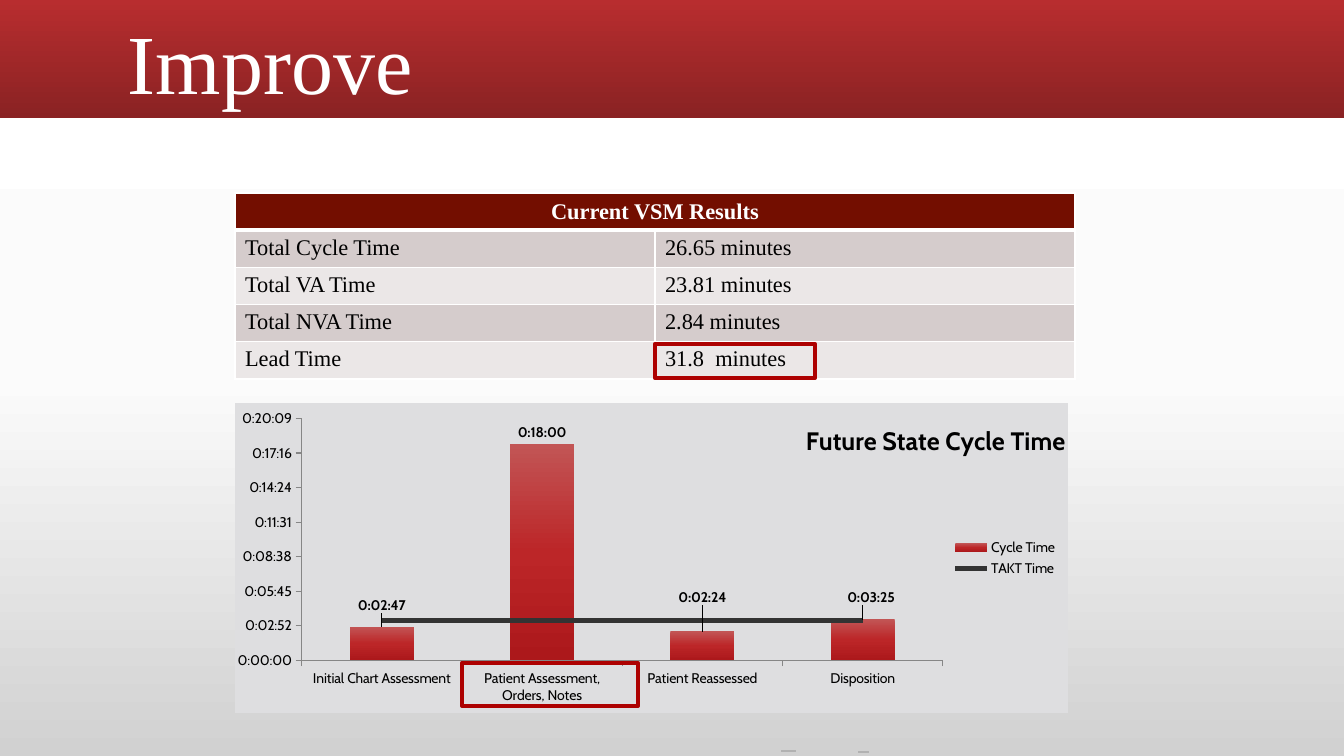
from copy import deepcopy
from lxml import etree
from pptx import Presentation
from pptx.chart.data import CategoryChartData as ChartData
from pptx.dml.color import RGBColor
from pptx.enum.chart import XL_CHART_TYPE as Kind, XL_LABEL_POSITION as Spot
from pptx.enum.chart import XL_LEGEND_POSITION as Side, XL_MARKER_STYLE as Mark
from pptx.enum.chart import XL_TICK_MARK as Tick
from pptx.enum.shapes import MSO_CONNECTOR as Link, MSO_SHAPE as Form
from pptx.enum.text import MSO_ANCHOR as Anchor, PP_ALIGN as Align
from pptx.oxml import parse_xml
from pptx.oxml.ns import nsdecls, qn
from pptx.util import Pt

SCALE = 914400 / 100.8
SERIF = "Times New Roman"
SANS = "Cabin"
TIME = "h:mm:ss;@"
WHITE = RGBColor(0xFF, 0xFF, 0xFF)
BLACK = RGBColor(0, 0, 0)
PALE = RGBColor(0xFB, 0xFB, 0xFB)
SMOKE = RGBColor(0xD1, 0xD1, 0xD1)
RED = RGBColor(0xB8, 0x2D, 0x2F)
WINE = RGBColor(0x8A, 0x22, 0x23)
ROSE = RGBColor(0xC2, 0x55, 0x55)
CORE = RGBColor(0xBC, 0x26, 0x28)
DEEP = RGBColor(0xAC, 0x18, 0x1B)
HEAD = RGBColor(0x73, 0x0E, 0x00)
BANDS = (RGBColor(0xD5, 0xCC, 0xCC), RGBColor(0xEB, 0xE7, 0xE7))
FRAME = RGBColor(0xAD, 0x01, 0x01)
DASH = RGBColor(0xB2, 0xB2, 0xB2)
AXIS = RGBColor(0x86, 0x86, 0x86)
DARK = RGBColor(0x33, 0x33, 0x33)
PANEL = RGBColor(0xDE, 0xDE, 0xE0)
ROWS = (
    ("Total Cycle Time", "26.65 minutes"),
    ("Total VA Time", "23.81 minutes"),
    ("Total NVA Time", "2.84 minutes"),
    ("Lead Time", "31.8  minutes"),
)
STEPS = ("Initial Chart Assessment", "Patient Assessment, Orders, Notes",
         "Patient Reassessed", "Disposition")
CYCLE = (0.001944, 0.012507, 0.00167, 0.002377)
TAKT = 0.0023
SHIFTS = ((0, 0, -0.03), (2, 0, -0.07), (3, 0.01, -0.03))


def px(*sizes):
    return [round(size * SCALE) for size in sizes]


def style(font, size, color, name, bold=False):
    font.size = Pt(size)
    font.color.rgb = color
    font.name = name
    font.bold = bold


def shade(fill, node, colors):
    fill.gradient()
    fill.gradient_angle = 270
    stops = next(node.iter(qn("a:gsLst")))
    while len(stops) < len(colors):
        stops.append(deepcopy(stops[-1]))
    for i, (stop, color) in enumerate(zip(fill.gradient_stops, colors)):
        stop.color.rgb = color
        stop.position = i / (len(colors) - 1)


def banner(slide, left, top, width, height):
    bar = slide.shapes.add_shape(Form.RECTANGLE, *px(left, top, width, height))
    bar.shadow.inherit = False
    bar.line.fill.background()
    shade(bar.fill, bar.element, (RED, WINE))
    box = slide.shapes.add_textbox(*px(left + 118, top + 11, 1109, height - 11))
    frame = box.text_frame
    frame.word_wrap = True
    frame.vertical_anchor = Anchor.BOTTOM
    para = frame.paragraphs[0]
    para.text = "Improve"
    para.line_spacing = 0.9
    style(para.font, 60, WHITE, SERIF)


def dash(slide, left, top, width):
    line = slide.shapes.add_connector(
        Link.STRAIGHT, *px(left + width, top, left, top))
    line.line.color.rgb = DASH
    line.line.width = Pt(1.75)
    etree.SubElement(line.element.spPr, qn("a:effectLst"))


def edge(cell, thick):
    props = cell._tc.get_or_add_tcPr()
    for i, side in enumerate("LRTB"):
        props.insert(i, parse_xml(
            f'<a:ln{side} {nsdecls("a")} w="{Pt(thick.get(side, 1))}">'
            f'<a:solidFill><a:srgbClr val="{WHITE}"/></a:solidFill></a:ln{side}>'))


def results(slide, left, top, width, height):
    count = len(ROWS) + 1
    grid = slide.shapes.add_table(
        count, 2, *px(left, top, width, height)).table
    for row, texts in enumerate((("Current VSM Results", ""), *ROWS)):
        for col, text in enumerate(texts):
            cell = grid.cell(row, col)
            cell.fill.solid()
            cell.fill.fore_color.rgb = BANDS[(row - 1) % 2] if row else HEAD
            edge(cell, {"B": 3} if row == 0 else {"T": 3} if row == 1 else {})
            para = cell.text_frame.paragraphs[0]
            para.text = text
            style(para.font, 16, BLACK if row else WHITE, SERIF, row == 0)
    first = grid.cell(0, 0)
    first.merge(grid.cell(0, 1))
    first.vertical_anchor = Anchor.MIDDLE
    first.text_frame.paragraphs[0].alignment = Align.CENTER


def layout(**parts):
    tags = "".join(f'<c:{key} val="{val}"/>' for key, val in parts.items())
    return parse_xml(f'<c:layout {nsdecls("c")}><c:manualLayout>{tags}'
                     '</c:manualLayout></c:layout>')


def place(node, spot):
    old = node.find(qn("c:layout"))
    if old is None:
        node.insert(0, spot)
    else:
        node.replace(old, spot)


def label(series, root):
    labels = series.data_labels
    labels.show_value = True
    labels.number_format = TIME
    labels.number_format_is_linked = False
    labels.position = Spot.OUTSIDE_END
    style(labels.font, 10, BLACK, SANS, True)
    group = next(root.iter(qn("c:dLbls")))
    parts = [part for part in group if part.tag != qn("c:showLeaderLines")]
    for i, (point, right, down) in enumerate(SHIFTS):
        item = parse_xml(f'<c:dLbl {nsdecls("c")}><c:idx val="{point}"/></c:dLbl>')
        item.append(layout(x=right, y=down))
        item.extend([deepcopy(part) for part in parts])
        group.insert(i, item)


def combine(root):
    bars = next(root.iter(qn("c:barChart")))
    takt = bars.findall(qn("c:ser"))[1]
    for flag in takt.findall(qn("c:invertIfNegative")):
        takt.remove(flag)
    lines = parse_xml(
        f'<c:lineChart {nsdecls("c")}><c:grouping val="standard"/>'
        '<c:varyColors val="0"/></c:lineChart>')
    lines.append(takt)
    etree.SubElement(lines, qn("c:marker")).set("val", "1")
    lines.extend([deepcopy(axis) for axis in bars.findall(qn("c:axId"))])
    bars.addnext(lines)


def cycle(slide, left, top, width, height):
    data = ChartData(number_format=TIME)
    data.categories = STEPS
    data.add_series("Cycle Time", CYCLE)
    data.add_series("TAKT Time", [TAKT] * len(STEPS))
    chart = slide.shapes.add_chart(
        Kind.COLUMN_CLUSTERED, *px(left, top, width, height), data).chart
    root = chart.element
    style(chart.font, 10, BLACK, SANS)
    combine(root)
    bars, lines = chart.plots
    bars.gap_width = 150
    bars.vary_by_categories = False
    shade(bars.series[0].format.fill, root, (ROSE, CORE, DEEP))
    label(bars.series[0], root)
    takt = lines.series[0]
    takt.smooth = False
    takt.marker.style = Mark.NONE
    takt.format.line.color.rgb = DARK
    takt.format.line.width = Pt(3.5)
    for axis in (chart.category_axis, chart.value_axis):
        axis.has_major_gridlines = False
        axis.major_tick_mark = Tick.OUTSIDE
        axis.format.line.color.rgb = AXIS
    scale = chart.value_axis
    scale.minimum_scale, scale.maximum_scale, scale.major_unit = 0, 0.014, 0.002
    scale.tick_labels.number_format = TIME
    scale.tick_labels.number_format_is_linked = False
    chart.has_legend = True
    chart.legend.position = Side.RIGHT
    chart.legend.include_in_layout = False
    chart.has_title = True
    para = chart.chart_title.text_frame.paragraphs[0]
    para.text = "Future State Cycle Time"
    style(para.font, 18, BLACK, SANS, True)
    title = next(root.iter(qn("c:title")))
    place(title, layout(xMode="edge", yMode="edge", x=0.68, y=0.05))
    for flag in title.findall(qn("c:overlay")):
        flag.set("val", "1")
    place(next(root.iter(qn("c:plotArea"))), layout(
        layoutTarget="inner", xMode="edge", yMode="edge",
        x=0.08, y=0.05, w=0.77, h=0.78))
    root.find(qn("c:chart")).addnext(parse_xml(
        f'<c:spPr {nsdecls("c", "a")}><a:solidFill><a:srgbClr val="{PANEL}"/>'
        '</a:solidFill><a:ln><a:noFill/></a:ln></c:spPr>'))


def frame(slide, left, top, width, height):
    box = slide.shapes.add_shape(Form.RECTANGLE, *px(left, top, width, height))
    box.shadow.inherit = False
    box.fill.background()
    box.line.color.rgb = FRAME
    box.line.width = Pt(3)


def main():
    deck = Presentation()
    deck.slide_width, deck.slide_height = px(1344, 756)
    slide = deck.slides.add_slide(deck.slide_layouts[6])
    shade(slide.background.fill, slide.element, (WHITE, PALE, SMOKE))
    banner(slide, 0, 0, 1344, 118)
    dash(slide, 781, 751, 15)
    dash(slide, 858, 752, 11)
    results(slide, 235, 193, 840, 186)
    cycle(slide, 235, 403, 835, 310)
    frame(slide, 655, 344, 160, 34)
    frame(slide, 462, 663, 176, 43)
    deck.save("out.pptx")


if __name__ == "__main__":
    main()
